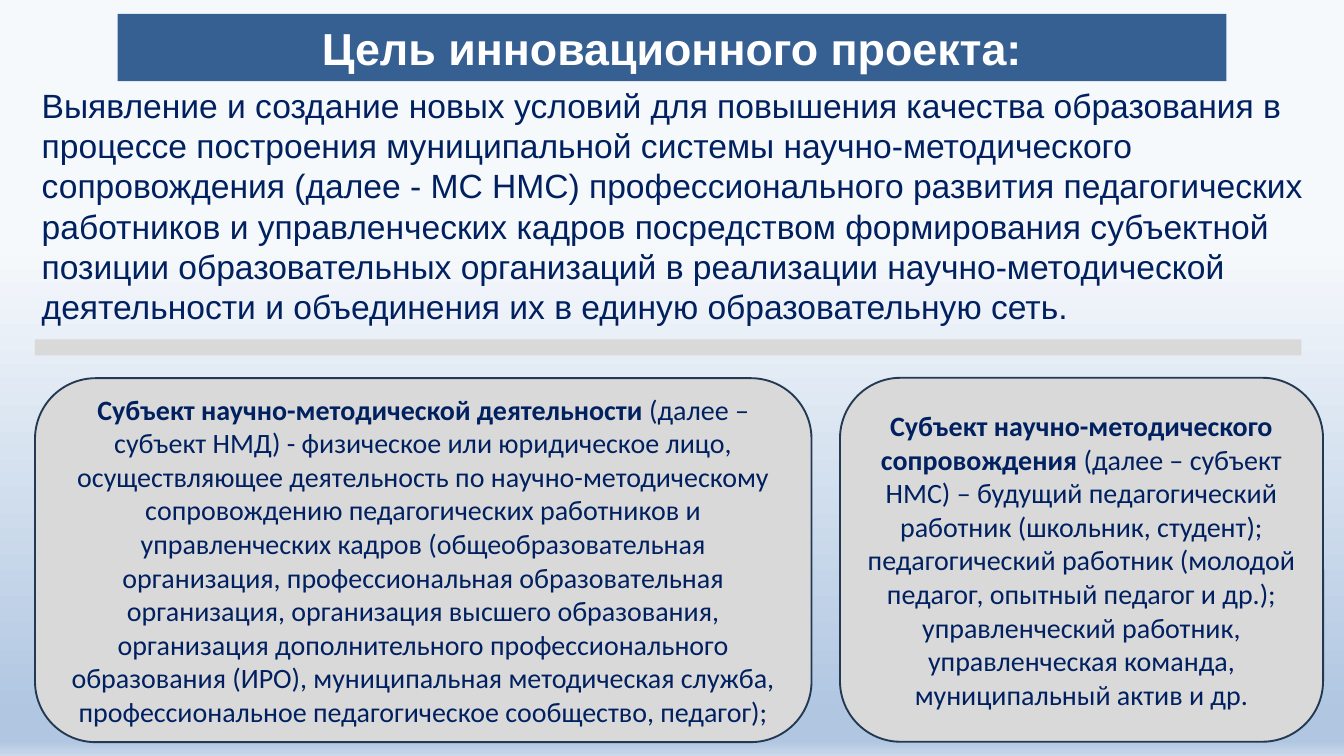
from copy import deepcopy

from pptx import Presentation
from pptx.dml.color import RGBColor
from pptx.enum.shapes import MSO_SHAPE as Shape
from pptx.enum.text import MSO_ANCHOR as Anchor, MSO_AUTO_SIZE as AutoSize, PP_ALIGN as Align
from pptx.oxml.ns import qn
from pptx.util import Pt

NAVY = RGBColor(0x00, 0x20, 0x60)
BLUE = RGBColor(0x37, 0x60, 0x92)
OUTLINE = RGBColor(0x23, 0x39, 0x53)
GREY = RGBColor(0xD9, 0xD9, 0xD9)
WHITE = RGBColor(0xFF, 0xFF, 0xFF)
BACKGROUND_STOPS = [
    (0.32, RGBColor(0xF6, 0xF9, 0xFC)),
    (0.95, RGBColor(0xB0, 0xC6, 0xE1)),
    (0.98, RGBColor(0xB0, 0xC6, 0xE1)),
    (1.0, RGBColor(0xCA, 0xD9, 0xEB)),
]

TITLE = "Цель инновационного проекта:"
GOAL = (
    "Выявление и создание новых условий для повышения качества образования в процессе "
    "построения муниципальной системы научно-методического сопровождения (далее - МС НМС) "
    "профессионального развития педагогических работников и управленческих кадров "
    "посредством формирования субъектной позиции образовательных организаций в реализации "
    "научно-методической деятельности и объединения их в единую образовательную сеть."
)
DEFINITIONS = [
    (
        (37.5, 405.2, 832, 390),
        "Субъект научно-методической деятельности",
        " (далее – субъект НМД) - физическое или юридическое лицо, осуществляющее "
        "деятельность по научно-методическому сопровождению педагогических работников и "
        "управленческих кадров (общеобразовательная организация, профессиональная "
        "образовательная организация, организация высшего образования, организация "
        "дополнительного профессионального образования (ИРО), муниципальная методическая "
        "служба, профессиональное педагогическое сообщество, педагог);",
    ),
    (
        (900, 404.8, 517.6, 390),
        "Субъект научно-методического сопровождения ",
        "(далее – субъект НМС) – будущий педагогический работник (школьник, студент); "
        "педагогический работник (молодой педагог, опытный педагог и др.); управленческий "
        "работник, управленческая команда, муниципальный актив и др.",
    ),
]

TITLE_FONT = {"name": "Arial", "size": Pt(48), "bold": True}
GOAL_FONT = {"name": "Arial", "size": Pt(36), "bold": False}
TERM_FONT = {"name": "Calibri", "size": Pt(30), "bold": True}
MEANING_FONT = {**TERM_FONT, "bold": False}


def place(shape, box):
    for side, value in zip(("left", "top", "width", "height"), box):
        setattr(shape, side, Pt(value))


def paint(shape, color):
    shape.fill.solid()
    shape.fill.fore_color.rgb = color


def add_block(slide, kind, box):
    shape = slide.shapes.add_shape(kind, *map(Pt, box))
    shape.shadow.inherit = False
    paint(shape, GREY)
    return shape


def write(shape, runs, color, align, anchor):
    frame = shape.text_frame
    frame.word_wrap = True
    frame.auto_size = AutoSize.NONE
    frame.vertical_anchor = anchor
    paragraph = frame.paragraphs[0]
    paragraph.alignment = align
    for text, font in runs:
        run = paragraph.add_run()
        run.text = text
        run.font.color.rgb = color
        for name, value in font.items():
            setattr(run.font, name, value)
    return paragraph


def paint_background(slide):
    fill = slide.background.fill
    fill.gradient()
    fill.gradient_angle = 270
    first = fill.gradient_stops[0]
    stop_list = slide.background._cSld.find(".//" + qn("a:gsLst"))
    for _ in range(len(BACKGROUND_STOPS) - len(fill.gradient_stops)):
        stop_list.append(deepcopy(stop_list[0]))
    for stop, (position, color) in zip(fill.gradient_stops, BACKGROUND_STOPS):
        stop.position = position
        stop.color.rgb = color


def main():
    presentation = Presentation()
    presentation.slide_width, presentation.slide_height = Pt(1440), Pt(810)
    slide = presentation.slides.add_slide(presentation.slide_layouts[1])
    for placeholder in list(slide.placeholders)[2:]:
        placeholder.element.getparent().remove(placeholder.element)
    paint_background(slide)

    title = slide.shapes.title
    place(title, (126, 15, 1188, 72))
    paint(title, BLUE)
    write(title, [(TITLE, TITLE_FONT)], WHITE, Align.CENTER, Anchor.MIDDLE)

    goal = slide.placeholders[1]
    place(goal, (37.5, 87, 1380, 273.6))
    paragraph = write(goal, [(GOAL, GOAL_FONT)], NAVY, Align.LEFT, Anchor.TOP)
    properties = paragraph._p.get_or_add_pPr()
    properties.set("marL", "0")
    properties.set("indent", "0")
    properties.append(properties.makeelement(qn("a:buNone"), {}))

    divider = add_block(slide, Shape.RECTANGLE, (37.5, 363.6, 1357, 17.3))
    divider.line.fill.background()

    for box, term, meaning in DEFINITIONS:
        card = add_block(slide, Shape.ROUNDED_RECTANGLE, box)
        card.line.color.rgb = OUTLINE
        card.line.width = Pt(2)
        runs = [(term, TERM_FONT), (meaning, MEANING_FONT)]
        write(card, runs, NAVY, Align.CENTER, Anchor.MIDDLE)


    presentation.save("out.pptx")


if __name__ == "__main__":
    main()
